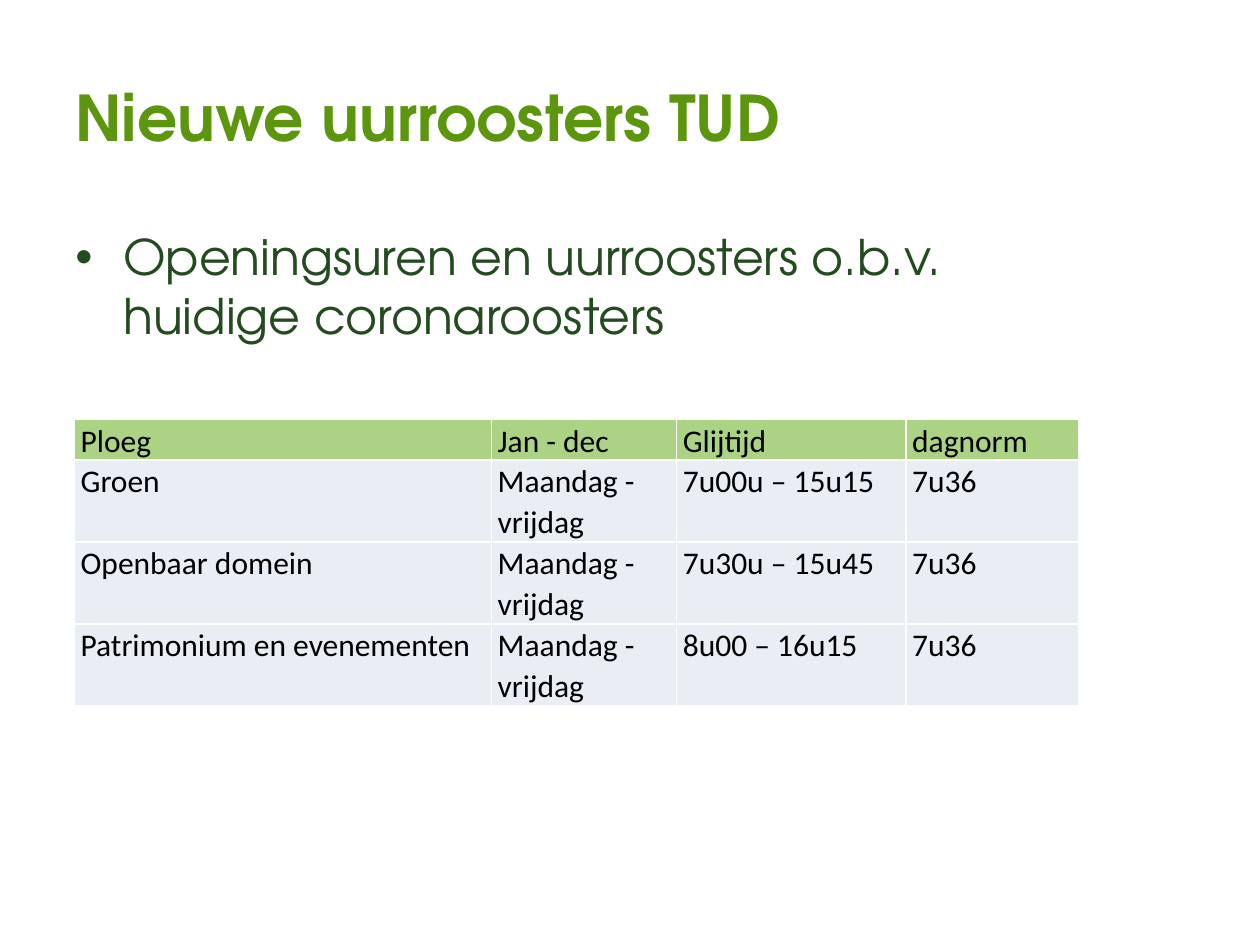
from lxml.etree import SubElement
from pptx import Presentation
from pptx.dml.color import RGBColor
from pptx.enum.text import MSO_ANCHOR
from pptx.oxml import parse_xml
from pptx.oxml.ns import nsdecls, qn
from pptx.util import Inches, Pt

TITLE_GREEN = RGBColor(0x5C, 0x96, 0x0E)
BODY_GREEN = RGBColor(0x24, 0x4A, 0x1F)
HEADER_GREEN = RGBColor(0xAC, 0xD3, 0x84)
ROW_GREY = RGBColor(0xE9, 0xED, 0xF4)
WHITE = RGBColor(0xFF, 0xFF, 0xFF)
BLACK = RGBColor(0, 0, 0)

TITLE = {"name": "TeX Gyre Adventor", "size": Pt(36), "bold": True}
BODY = {"name": "TeX Gyre Adventor", "size": Pt(28)}
CELL = {"name": "Calibri", "size": Pt(18), "bold": False}

COLUMNS = [3.31, 1.47, 1.82, 1.37]
DAYS = "Maandag - vrijdag"
ROSTER = [
    ["Ploeg", "Jan - dec", "Glijtijd", "dagnorm"],
    ["Groen", DAYS, "7u00u – 15u15", "7u36"],
    ["Openbaar domein", DAYS, "7u30u – 15u45", "7u36"],
    ["Patrimonium en evenementen", DAYS, "8u00 – 16u15", "7u36"],
]


def write(p, text, values, color):
    """Add a formatted run to a paragraph."""
    r = p.add_run()
    r.text = text
    for name, value in values.items():
        setattr(r.font, name, value)
    r.font.color.rgb = color


def add_text(s, box, text, values, color, anchor):
    """Add a wrapping text box and return its paragraph."""
    tf = s.shapes.add_textbox(*map(Inches, box)).text_frame
    tf.word_wrap = True
    tf.vertical_anchor = anchor
    p = tf.paragraphs[0]
    write(p, text, values, color)
    return p


def add_title(s, box):
    """Place the slide title."""
    add_text(s, box, "Nieuwe uurroosters TUD", TITLE, TITLE_GREEN, MSO_ANCHOR.MIDDLE)


def add_body(s, box):
    """Place the bulleted statement."""
    text = "Openingsuren en uurroosters o.b.v. huidige coronaroosters"
    pPr = add_text(s, box, text, BODY, BODY_GREEN, MSO_ANCHOR.TOP)._p.get_or_add_pPr()
    pPr.set("marL", str(Inches(0.38)))
    pPr.set("indent", str(-Inches(0.38)))
    SubElement(pPr, qn("a:buFont"), typeface="Arial")
    SubElement(pPr, qn("a:buChar"), char="•")


def add_borders(cell):
    """Draw a thin white line on each side of a cell."""
    tcPr = cell._tc.get_or_add_tcPr()
    for i, side in enumerate("LRTB"):
        tcPr.insert(i, parse_xml(
            f'<a:ln{side} {nsdecls("a")} w="{Pt(1)}"><a:solidFill>'
            f'<a:srgbClr val="{WHITE}"/></a:solidFill></a:ln{side}>'))


def add_roster(s, box):
    """Place the table of teams and working hours."""
    shape = s.shapes.add_table(len(ROSTER), len(COLUMNS), *map(Inches, box))
    table = shape.table
    for column, width in zip(table.columns, COLUMNS):
        column.width = Inches(width)
    margins = {"margin_left": Inches(0.05), "margin_right": Inches(0.05),
               "margin_top": 0, "margin_bottom": 0}
    for i, texts in enumerate(ROSTER):
        table.rows[i].height = Inches(0.65 if i else 0.32)
        for j, text in enumerate(texts):
            cell = table.cell(i, j)
            for name, value in margins.items():
                setattr(cell, name, value)
            cell.fill.solid()
            cell.fill.fore_color.rgb = ROW_GREY if i else HEADER_GREEN
            add_borders(cell)
            p = cell.text_frame.paragraphs[0]
            p.line_spacing = 1.07
            write(p, text, CELL, BLACK)


def main():
    """Build and save the slide."""
    prs = Presentation()
    prs.slide_width, prs.slide_height = Inches(10), Inches(7.5)
    s = prs.slides.add_slide(prs.slide_layouts[6])
    add_title(s, (0.5, 0.3, 8.2, 1.25))
    add_body(s, (0.5, 1.75, 8.2, 4.95))
    add_roster(s, (0.59, 3.33, 7.97, 2.27))
    prs.save("out.pptx")


if __name__ == "__main__":
    main()
